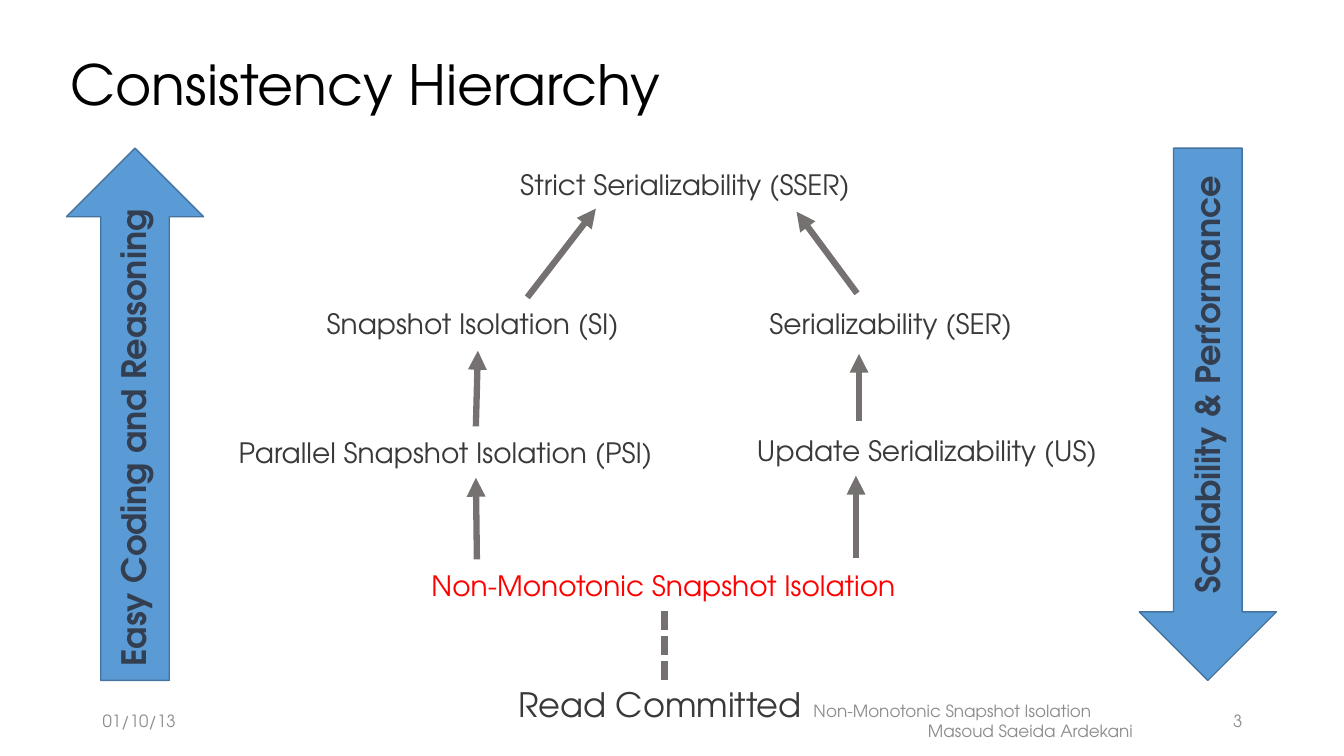
from lxml.etree import SubElement
from pptx import Presentation
from pptx.dml.color import RGBColor
from pptx.enum.dml import MSO_LINE
from pptx.enum.shapes import MSO_CONNECTOR, MSO_SHAPE
from pptx.enum.text import MSO_ANCHOR, PP_ALIGN
from pptx.oxml.ns import qn
from pptx.util import Pt

EMU_PER_PX = 9144  # 100 px to the inch

BLACK = "000000"
DARK_GRAY = "3B3838"
LINE_GRAY = "767171"
FOOTER_GRAY = "8C8C8C"
RED = "FF0000"
NAVY = "333F50"
BLUE = "5B9BD5"
BLUE_EDGE = "43739E"


def px(length):
    return length * EMU_PER_PX


def color(hex_string):
    return RGBColor.from_string(hex_string)


class HierarchySlide:
    font_name = "TeX Gyre Adventor"

    def __init__(self, presentation):
        self.slide = presentation.slides.add_slide(presentation.slide_layouts[6])

    def text(self, left, top, width, height, *lines, size=20, fill=DARK_GRAY,
             bold=False, aligns=(PP_ALIGN.CENTER,), anchor=MSO_ANCHOR.TOP,
             wrap=True, rotation=0, line_spacing=None):
        """Add a text box with one paragraph, and one entry of aligns, per line."""
        shape = self.slide.shapes.add_textbox(px(left), px(top), px(width), px(height))
        shape.rotation = rotation
        frame = shape.text_frame
        frame.word_wrap = wrap
        frame.vertical_anchor = anchor
        frame.text = "\n".join(lines)
        for paragraph, align in zip(frame.paragraphs, aligns):
            paragraph.alignment = align
            paragraph.line_spacing = line_spacing
            font = paragraph.runs[0].font
            font.name = self.font_name
            font.size = Pt(size)
            font.bold = bold
            font.color.rgb = color(fill)

    def block_arrow(self, preset, left):
        shape = self.slide.shapes.add_shape(preset, px(left), px(147), px(136), px(528))
        shape.shadow.inherit = False
        shape.fill.solid()
        shape.fill.fore_color.rgb = color(BLUE)
        shape.line.color.rgb = color(BLUE_EDGE)
        shape.line.width = Pt(1)

    def line(self, start, end, dotted=False):
        """Join two points with an arrow, or with a plain dotted line."""
        connector = self.slide.shapes.add_connector(
            MSO_CONNECTOR.STRAIGHT, *map(px, start + end))
        connector.line.color.rgb = color(LINE_GRAY)
        connector.line.width = Pt(4.5)
        if dotted:
            connector.line.dash_style = MSO_LINE.SQUARE_DOT
        else:
            SubElement(connector.line._get_or_add_ln(), qn("a:tailEnd"), type="triangle")
        SubElement(connector._element.spPr, qn("a:effectLst"))

    def side_label(self, left, top, width, label):
        self.text(left, top, width, 50, label, size=24, fill=NAVY, bold=True,
                  aligns=[PP_ALIGN.LEFT], wrap=False, rotation=270)

    def footer(self, left, width, *lines, aligns):
        self.text(left, 695, width, 40, *lines, size=12, fill=FOOTER_GRAY,
                  aligns=aligns, anchor=MSO_ANCHOR.MIDDLE)


def main():
    presentation = Presentation()
    presentation.slide_width = px(1333)
    presentation.slide_height = px(750)
    hierarchy = HierarchySlide(presentation)

    hierarchy.text(60, 52, 1150, 70, "Consistency Hierarchy", size=39.6, fill=BLACK,
                   aligns=[PP_ALIGN.LEFT], anchor=MSO_ANCHOR.MIDDLE, line_spacing=0.9)

    hierarchy.block_arrow(MSO_SHAPE.UP_ARROW, 66)
    hierarchy.side_label(-107, 407, 478, "Easy Coding and Reasoning")
    hierarchy.block_arrow(MSO_SHAPE.DOWN_ARROW, 1130)
    hierarchy.side_label(977, 354, 440, "Scalability & Performance")

    levels = [
        (458, 161, 443, "Strict Serializability (SSER)", DARK_GRAY),
        (283, 299, 372, "Snapshot Isolation (SI)", DARK_GRAY),
        (716, 299, 335, "Serializability (SER)", DARK_GRAY),
        (171, 427, 542, "Parallel Snapshot Isolation (PSI)", DARK_GRAY),
        (698, 425, 443, "Update Serializability (US)", DARK_GRAY),
        (349, 559, 618, "Non-Monotonic Snapshot Isolation", RED),
    ]
    for left, top, width, label, fill in levels:
        hierarchy.text(left, top, width, 44, label, fill=fill)
    hierarchy.text(424, 674, 461, 50, "Read Committed", size=24)

    arrows = [
        ((523, 295), (591, 207)),
        ((850, 291), (790, 210)),
        ((472, 423), (474, 348)),
        ((852, 418), (852, 351)),
        ((473, 555), (472, 474)),
        ((849, 554), (849, 472)),
    ]
    for start, end in arrows:
        hierarchy.line(start, end)
    hierarchy.line((659, 675), (659, 603), dotted=True)

    hierarchy.footer(92, 300, "01/10/13", aligns=[PP_ALIGN.LEFT])
    hierarchy.footer(797, 450, "Non-Monotonic Snapshot Isolation", "Masoud Saeida Ardekani",
                     aligns=[PP_ALIGN.LEFT, PP_ALIGN.CENTER])
    hierarchy.footer(942, 300, "3", aligns=[PP_ALIGN.RIGHT])

    presentation.save("out.pptx")


if __name__ == "__main__":
    main()
